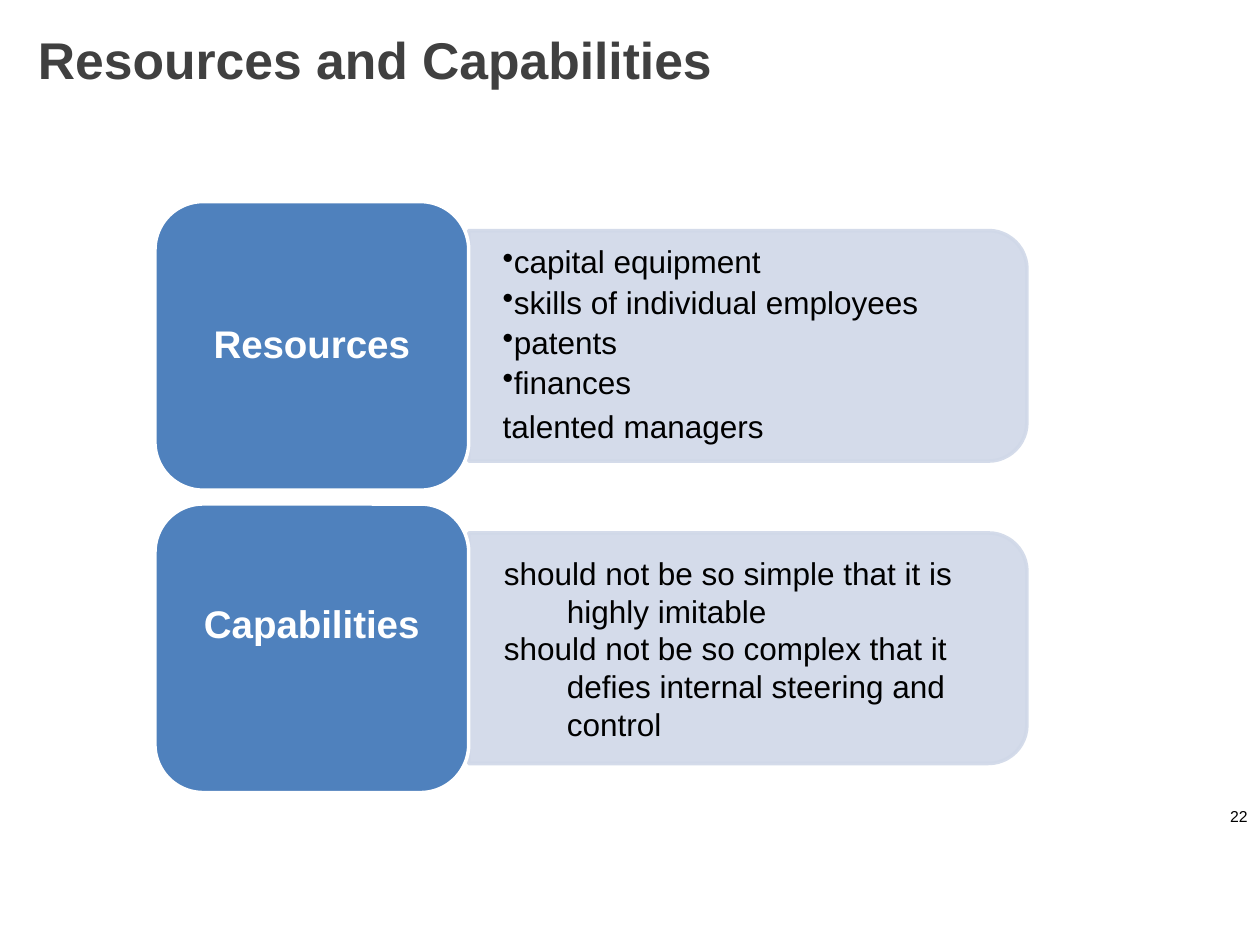
"""Build the Resources and Capabilities slide."""
from lxml import etree
from pptx import Presentation
from pptx.dml.color import RGBColor
from pptx.enum.shapes import MSO_SHAPE
from pptx.enum.text import MSO_ANCHOR, MSO_AUTO_SIZE, PP_ALIGN
from pptx.oxml.ns import qn
from pptx.util import Inches, Pt

LEFT, CENTER, RIGHT = PP_ALIGN.LEFT, PP_ALIGN.CENTER, PP_ALIGN.RIGHT
MIDDLE = MSO_ANCHOR.MIDDLE
NO_AUTOFIT = MSO_AUTO_SIZE.NONE
ROUND_RECT = MSO_SHAPE.ROUNDED_RECTANGLE
ROUND_TOP_RECT = MSO_SHAPE.ROUND_2_SAME_RECTANGLE

THEME = {
    "font": "Arial",
    "title": (29.5, "404040", True),
    "label": (22, "FFFFFF", True),
    "detail": (18, "000000", False),
    "number": (9, "000000", False),
    "tile": "4F81BD",
    "tile_line": "FFFFFF",
    "panel": "D0D8E8",
    "panel_opacity": 90,
    "line": 2,
}

TITLE = "Resources and Capabilities"
PAGE_NUMBER = "22"
TOPICS = [
    {
        "label": "Resources",
        "lift": 0,
        "indent": 0.04,
        "bulleted": ["capital equipment", "skills of individual employees", "patents", "finances"],
        "plain": ["talented managers"],
    },
    {
        "label": "Capabilities",
        "lift": 0.35,
        "indent": 0.51,
        "bulleted": [],
        "plain": [
            "should not be so simple that it is highly imitable",
            "should not be so complex that it defies internal steering and control",
        ],
    },
]

TILE_LEFT, TILE_TOP, TILE_WIDTH, TILE_HEIGHT = 1.23, 1.6, 2.49, 2.29
TOPIC_PITCH = 2.4
PANEL_LENGTH, PANEL_DEPTH = 4.43, 1.83
DETAIL_WIDTH, DETAIL_HEIGHT = 4.34, 1.65
LABEL_MARGIN = 0.11
HANGING = -0.5


def style_paragraph(paragraph, role, align=LEFT, line_spacing=None):
    size, color, bold = THEME[role]
    paragraph.alignment = align
    if line_spacing:
        paragraph.line_spacing = line_spacing
    for run in paragraph.runs:
        run.font.name = THEME["font"]
        run.font.size = Pt(size)
        run.font.bold = bold
        run.font.color.rgb = RGBColor.from_string(color)


def set_frame(frame, side=0.1, top=0.05, bottom=0.05):
    frame.word_wrap = True
    frame.auto_size = NO_AUTOFIT
    frame.vertical_anchor = MIDDLE
    frame.margin_left = frame.margin_right = Inches(side)
    frame.margin_top, frame.margin_bottom = Inches(top), Inches(bottom)


def add_text(slide, box, **margins):
    frame = slide.shapes.add_textbox(*map(Inches, box)).text_frame
    set_frame(frame, **margins)
    return frame


def add_block(slide, kind, box, fill, line, opacity=100):
    block = slide.shapes.add_shape(kind, *map(Inches, box))
    block.shadow.inherit = False
    block.fill.solid()
    block.fill.fore_color.rgb = RGBColor.from_string(fill)
    block.line.color.rgb = RGBColor.from_string(line)
    block.line.width = Pt(THEME["line"])
    if opacity < 100:
        for color in block.element.spPr.iter(qn("a:srgbClr")):
            etree.SubElement(color, qn("a:alpha")).set("val", str(opacity * 1000))
    return block


def add_details(slide, topic, left, top):
    frame = add_text(slide, (left, top, DETAIL_WIDTH, DETAIL_HEIGHT), side=0.27, top=0.14, bottom=0.14)
    lines = topic["bulleted"] + topic["plain"]
    frame.text = "\n".join(lines)
    for index, paragraph in enumerate(frame.paragraphs):
        bulleted = index < len(topic["bulleted"])
        paragraph.level = 1
        properties = paragraph._p.get_or_add_pPr()
        properties.set("marL", str(Inches(topic["indent"])))
        properties.set("indent", str(Inches(HANGING)))
        if bulleted:
            etree.SubElement(properties, qn("a:buChar")).set("char", "•")
            paragraph.space_after = Pt(3.5)
        else:
            etree.SubElement(properties, qn("a:buNone"))
        style_paragraph(paragraph, "detail", line_spacing=0.9 if bulleted else None)


def add_topic(slide, topic, top):
    middle = top + TILE_HEIGHT / 2
    tile_right = TILE_LEFT + TILE_WIDTH
    panel_box = (
        tile_right + (PANEL_LENGTH - PANEL_DEPTH) / 2,
        middle - PANEL_LENGTH / 2,
        PANEL_DEPTH,
        PANEL_LENGTH,
    )
    panel = add_block(slide, ROUND_TOP_RECT, panel_box, THEME["panel"], THEME["panel"], THEME["panel_opacity"])
    panel.rotation = 90
    add_details(slide, topic, tile_right, middle - DETAIL_HEIGHT / 2)

    tile_box = (TILE_LEFT, top, TILE_WIDTH, TILE_HEIGHT)
    add_block(slide, ROUND_RECT, tile_box, THEME["tile"], THEME["tile_line"])
    label_box = (
        TILE_LEFT + LABEL_MARGIN,
        top + LABEL_MARGIN,
        TILE_WIDTH - 2 * LABEL_MARGIN,
        TILE_HEIGHT - 2 * LABEL_MARGIN,
    )
    label = add_text(slide, label_box, side=0.09, bottom=0.05 + topic["lift"])
    label.text = topic["label"]
    style_paragraph(label.paragraphs[0], "label", CENTER, 0.9)


def main():
    deck = Presentation()
    deck.slide_width, deck.slide_height = Inches(10), Inches(7.5)
    slide = deck.slides.add_slide(deck.slide_layouts[0])
    subtitle = slide.placeholders[1].element
    subtitle.getparent().remove(subtitle)

    title = slide.shapes.title
    title.left, title.top, title.width, title.height = map(Inches, (0.2, 0.21, 8.5, 0.58))
    set_frame(title.text_frame)
    title.text_frame.text = TITLE
    style_paragraph(title.text_frame.paragraphs[0], "title", line_spacing=0.9)

    number = add_text(slide, (9.51, 6.34, 0.49, 0.27))
    number.text = PAGE_NUMBER
    style_paragraph(number.paragraphs[0], "number", RIGHT)

    for row, topic in enumerate(TOPICS):
        add_topic(slide, topic, TILE_TOP + row * TOPIC_PITCH)
    deck.save("out.pptx")


if __name__ == "__main__":
    main()
